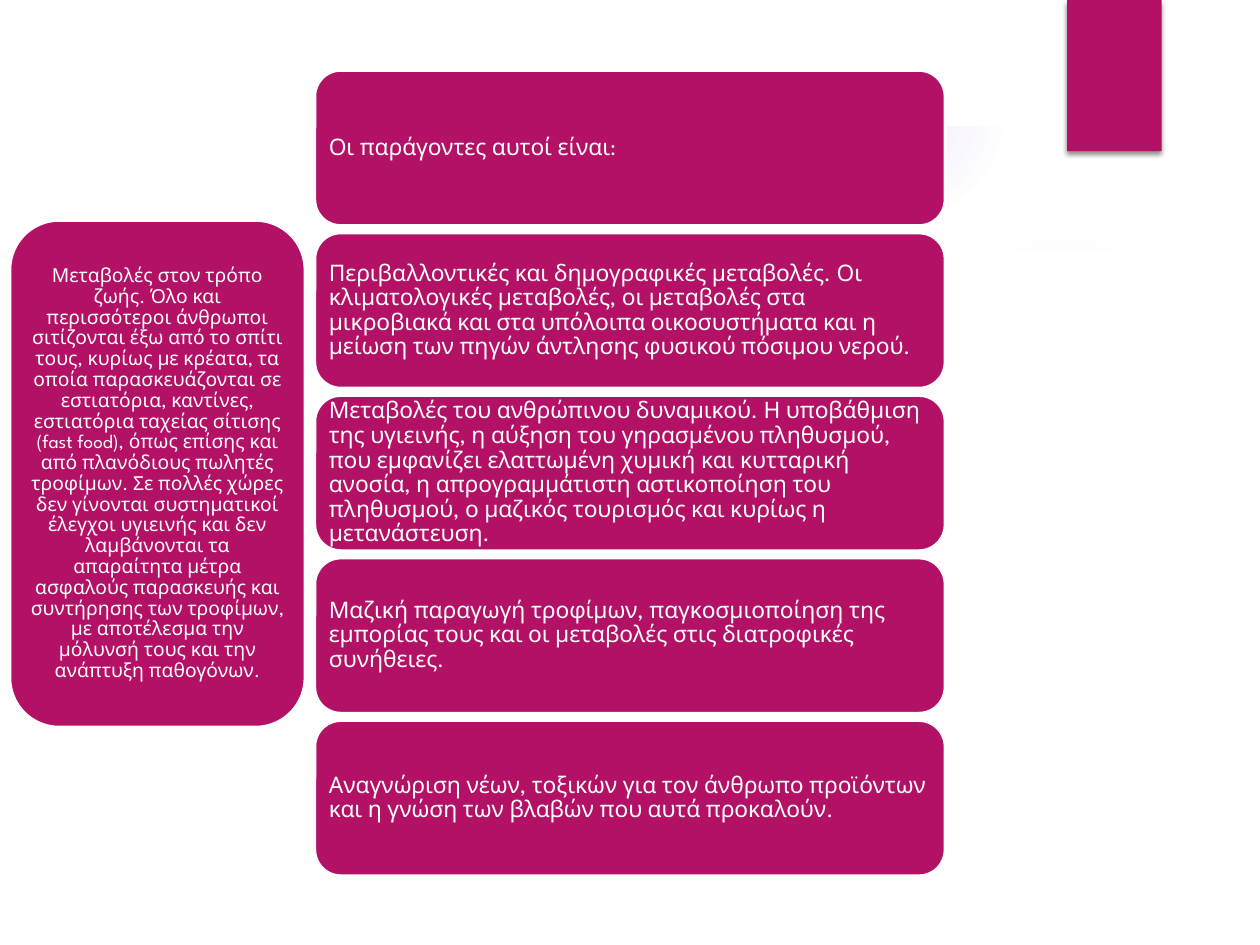
from dataclasses import dataclass

from lxml.etree import SubElement
from pptx import Presentation
from pptx.dml.color import RGBColor
from pptx.enum.shapes import MSO_SHAPE as Preset
from pptx.enum.text import MSO_ANCHOR as Anchor, PP_ALIGN as Align
from pptx.oxml import parse_xml
from pptx.oxml.ns import nsdecls, qn
from pptx.util import Inches, Pt

WIDTH, HEIGHT = 10, 7.5


@dataclass(frozen=True)
class Theme:
    accent: str = "B31166"
    paper: str = "FFFFFF"
    glow: str = "9B6BF2"
    font: str = "League Spartan"
    factor_size: float = 13
    lifestyle_size: float = 11
    border: float = 1.5
    line_spacing: float = 0.9


@dataclass(frozen=True)
class Area:
    left: float
    top: float
    width: float
    height: float

    def emu(self) -> tuple:
        return tuple(map(Inches, (self.left, self.top, self.width, self.height)))


@dataclass(frozen=True)
class Card:
    area: Area
    text: str
    size: float
    align: Align
    inset_y: float = 0.05


@dataclass(frozen=True)
class Glow:
    area: Area
    stops: tuple


@dataclass(frozen=True)
class Column:
    left: float
    top: float
    width: float
    row_height: float
    pitch: float

    def row(self, index: int) -> Area:
        return Area(self.left, self.top + index * self.pitch, self.width, self.row_height)


THEME = Theme()
FACTOR_COLUMN = Column(WIDTH / 4, 0.56, WIDTH / 2, 1.23, 1.29)
FACTORS = (
    "Οι παράγοντες αυτοί είναι:",
    "Περιβαλλοντικές και δημογραφικές μεταβολές. Οι κλιματολογικές μεταβολές, "
    "οι μεταβολές στα μικροβιακά και στα υπόλοιπα οικοσυστήματα και η μείωση των "
    "πηγών άντλησης φυσικού πόσιμου νερού.",
    "Μεταβολές του ανθρώπινου δυναμικού. Η υποβάθμιση της υγιεινής, η αύξηση του "
    "γηρασμένου πληθυσμού, που εμφανίζει ελαττωμένη χυμική και κυτταρική ανοσία, "
    "η απρογραμμάτιστη αστικοποίηση του πληθυσμού, ο μαζικός τουρισμός και κυρίως "
    "η μετανάστευση.",
    "Μαζική παραγωγή τροφίμων, παγκοσμιοποίηση της εμπορίας τους και οι μεταβολές "
    "στις διατροφικές συνήθειες.",
    "Αναγνώριση νέων, τοξικών για τον άνθρωπο προϊόντων και η γνώση των βλαβών που "
    "αυτά προκαλούν.",
)
LIFESTYLE = (
    "Μεταβολές στον τρόπο ζωής. Όλο και περισσότεροι άνθρωποι σιτίζονται έξω από το "
    "σπίτι τους, κυρίως με κρέατα, τα οποία παρασκευάζονται σε εστιατόρια, καντίνες, "
    "εστιατόρια ταχείας σίτισης (fast food), όπως επίσης και από πλανόδιους πωλητές "
    "τροφίμων. Σε πολλές χώρες δεν γίνονται συστηματικοί έλεγχοι υγιεινής και δεν "
    "λαμβάνονται τα απαραίτητα μέτρα ασφαλούς παρασκευής και συντήρησης των τροφίμων, "
    "με αποτέλεσμα την μόλυνσή τους και την ανάπτυξη παθογόνων."
)
GLOWS = (
    Glow(Area(6.89, 1.83, 3.08, 3.08), ((0, 7), (36, 6), (69, 0))),
    Glow(Area(6.22, 0, 1.75, 1.75), ((0, 14), (36, 7), (73, 0))),
)
PAGE = (
    (0.53, 2.03), (0.53, 6.99), (9.47, 6.99), (9.47, 2.03), (8.66, 2.15),
    (7.85, 2.24), (7.04, 2.29), (6.25, 2.33), (5.48, 2.34), (4.39, 2.34),
    (3.38, 2.3), (2.49, 2.24), (1.32, 2.13),
)
FRAME_OUTER = ((0, 0), (0, HEIGHT), (WIDTH, HEIGHT), (WIDTH, 0))
FRAME_INNER = ((9.45, 6.95), (9.45, 0.56), (0.56, 0.56), (0.56, 6.95))


def color(value: str) -> RGBColor:
    return RGBColor.from_string(value)


def paint(shape, fill: str) -> None:
    shape.shadow.inherit = False
    shape.fill.solid()
    shape.fill.fore_color.rgb = color(fill)
    shape.line.fill.background()


def draw_glow(slide, glow: Glow) -> None:
    shape = slide.shapes.add_shape(Preset.OVAL, *glow.area.emu())
    paint(shape, THEME.glow)
    stops = "".join(
        f'<a:gs pos="{place * 1000}"><a:srgbClr val="{THEME.glow}">'
        f'<a:alpha val="{alpha * 1000}"/></a:srgbClr></a:gs>'
        for place, alpha in glow.stops
    )
    gradient = parse_xml(
        f'<a:gradFill {nsdecls("a")}><a:gsLst>{stops}</a:gsLst><a:path path="circle">'
        '<a:fillToRect l="50000" t="50000" r="50000" b="50000"/></a:path></a:gradFill>'
    )
    properties = shape.element.spPr
    properties.replace(properties.find(qn("a:solidFill")), gradient)


def draw_outline(slide, *contours: tuple) -> None:
    first, *others = contours
    builder = slide.shapes.build_freeform(*first[0], scale=Inches(1))
    builder.add_line_segments(first[1:], close=True)
    for contour in others:
        builder.move_to(*contour[0])
        builder.add_line_segments(contour[1:], close=True)
    paint(builder.convert_to_shape(), THEME.paper)


def draw_bookmark(slide, area: Area) -> None:
    shape = slide.shapes.add_shape(Preset.RECTANGLE, *area.emu())
    paint(shape, THEME.accent)
    effects = shape.element.spPr.find(qn("a:effectLst"))
    shadow = SubElement(effects, qn("a:outerShdw"), blurRad=str(Pt(3)),
                        dist=str(Pt(2)), dir="5400000", rotWithShape="0")
    tone = SubElement(shadow, qn("a:srgbClr"), val="000000")
    SubElement(tone, qn("a:alpha"), val="45000")


def draw_card(slide, card: Card) -> None:
    shape = slide.shapes.add_shape(Preset.ROUNDED_RECTANGLE, *card.area.emu())
    paint(shape, THEME.accent)
    shape.line.color.rgb = color(THEME.paper)
    shape.line.width = Pt(THEME.border)
    frame = shape.text_frame
    frame.text = card.text
    frame.word_wrap = True
    frame.vertical_anchor = Anchor.MIDDLE
    frame.margin_left = frame.margin_right = Inches(0.05)
    frame.margin_top = frame.margin_bottom = Inches(card.inset_y)
    paragraph = frame.paragraphs[0]
    paragraph.alignment = card.align
    paragraph.line_spacing = THEME.line_spacing
    font = paragraph.runs[0].font
    font.name = THEME.font
    font.size = Pt(card.size)
    font.color.rgb = color(THEME.paper)


def main() -> None:
    deck = Presentation()
    deck.slide_width, deck.slide_height = Inches(WIDTH), Inches(HEIGHT)
    slide = deck.slides.add_slide(deck.slide_layouts[6])
    for glow in GLOWS:
        draw_glow(slide, glow)
    draw_outline(slide, PAGE)
    draw_outline(slide, FRAME_OUTER, FRAME_INNER)
    draw_bookmark(slide, Area(8.47, 0, 0.75, 1.2))
    for index, factor in enumerate(FACTORS):
        draw_card(slide, Card(FACTOR_COLUMN.row(index), factor, THEME.factor_size, Align.LEFT))
    draw_card(slide, Card(Area(0.08, 1.75, 2.34, 4.02), LIFESTYLE,
                          THEME.lifestyle_size, Align.CENTER, 0.02))
    deck.save("out.pptx")


if __name__ == "__main__":
    main()
